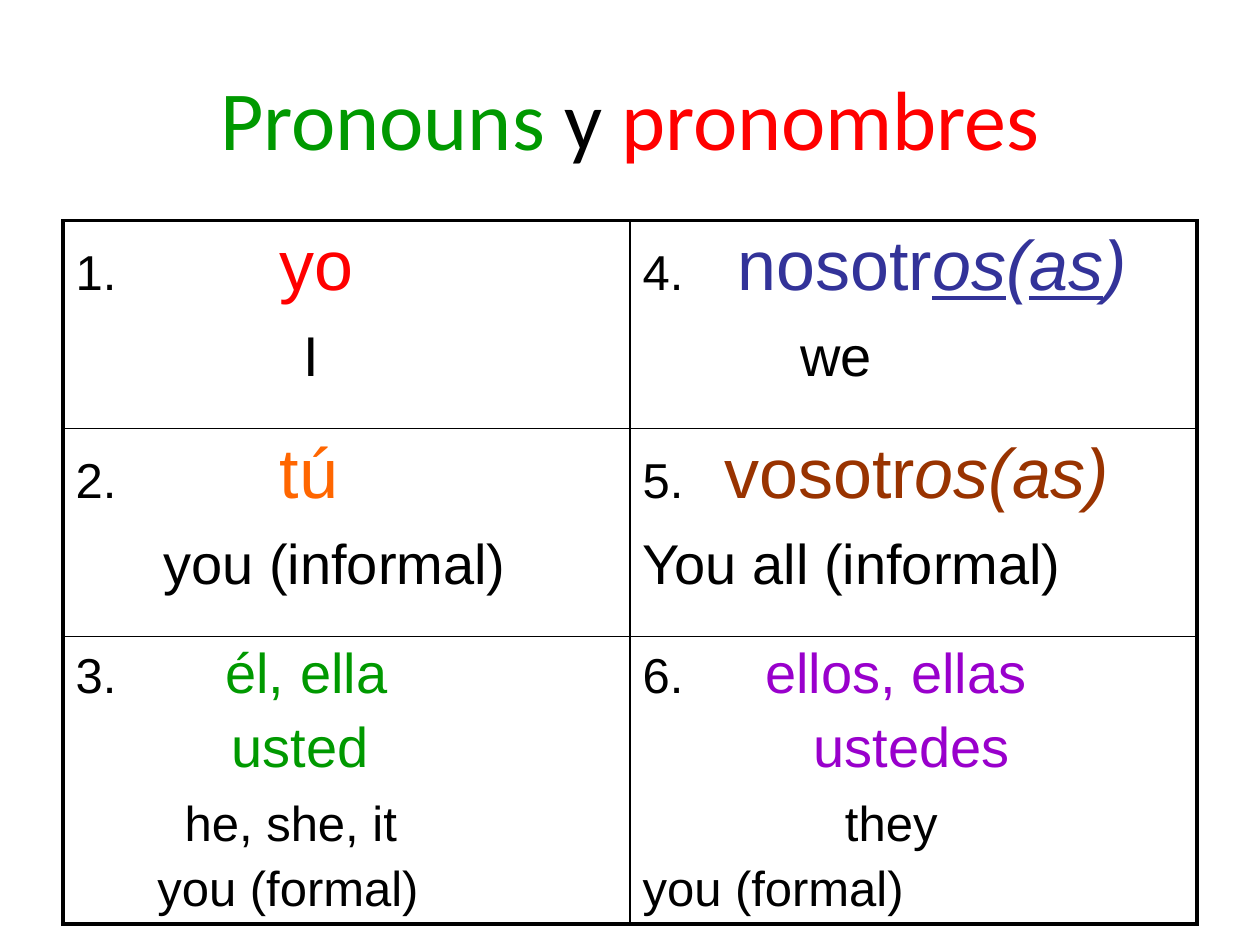
import pptx
import pptx.util
import pptx.dml.color
import pptx.enum.text
import lxml.etree
from pptx.oxml.ns import qn
from pptx.util import Cm, Pt

COLORS = {
    "black": "000000", "white": "FFFFFF", "green": "009900", "red": "FF0000",
    "blue": "333399", "orange": "FF6600", "brown": "993300", "purple": "9900CC",
}
THICK, THIN = Pt(2.25), Pt(1)


def add_run(p, text, size=28, color="black", font="Arial", italic=False, underline=False):
    r = p.add_run()
    r.text = text
    r.font.name = font
    r.font.size = Pt(size)
    r.font.italic = italic
    r.font.underline = underline
    r.font.color.rgb = pptx.dml.color.RGBColor.from_string(COLORS[color])


def add_heading(p, number, tab, parts, size, color):
    p.space_before = Pt(0)
    tabs = lxml.etree.SubElement(p._p.get_or_add_pPr(), qn("a:tabLst"))
    lxml.etree.SubElement(tabs, qn("a:tab"), pos=str(Cm(tab)), algn="l")
    add_run(p, f"{number}.\t")
    for text, style in parts:
        add_run(p, text, size=size, color=color, **style)


def add_line(tf, text, indent, before, size, color="black"):
    p = tf.add_paragraph()
    p.space_before = Pt(before)
    p._p.get_or_add_pPr().set("marL", str(Cm(indent)))
    add_run(p, text, size=size, color=color)


def set_borders(cell, **widths):
    tcPr = cell._tc.get_or_add_tcPr()
    for side in "LRTB":
        ln = lxml.etree.SubElement(tcPr, qn(f"a:ln{side}"), w=str(widths[side]))
        fill = lxml.etree.SubElement(ln, qn("a:solidFill"))
        lxml.etree.SubElement(fill, qn("a:srgbClr"), val=COLORS["black"])


def add_title(s):
    title = s.shapes.title
    title.left, title.top, title.width, title.height = Cm(1.27), Cm(0.76), Cm(22.86), Cm(3.18)
    tf = title.text_frame
    tf.vertical_anchor = pptx.enum.text.MSO_ANCHOR.MIDDLE
    p = tf.paragraphs[0]
    p.alignment = pptx.enum.text.PP_ALIGN.CENTER
    for text, color in (("Pronouns ", "green"), ("y", "black"), (" pronombres", "red")):
        add_run(p, text, size=48, color=color, font="Calibri")


def add_pronoun_table(s, cells):
    rows, cols = 3, 2
    table = s.shapes.add_table(rows, cols, Cm(1.27), Cm(4.45), Cm(22.86), Cm(14.18)).table
    table.first_row = table.horz_banding = False
    for row, height in zip(table.rows, (4.19, 4.19, 5.8)):
        row.height = Cm(height)
    for i, (tab, parts, size, color, lines) in enumerate(cells):
        col, row = divmod(i, rows)
        cell = table.cell(row, col)
        set_borders(
            cell,
            L=THICK if col == 0 else THIN,
            R=THICK if col == cols - 1 else THIN,
            T=THICK if row == 0 else THIN,
            B=THICK if row == rows - 1 else THIN,
        )
        cell.fill.solid()
        cell.fill.fore_color.rgb = pptx.dml.color.RGBColor.from_string(COLORS["white"])
        tf = cell.text_frame
        add_heading(tf.paragraphs[0], i + 1, tab, parts, size, color)
        for line in lines:
            add_line(tf, *line)


def main():
    prs = pptx.Presentation()
    prs.slide_width, prs.slide_height = Cm(25.4), Cm(19.05)
    s = prs.slides.add_slide(prs.slide_layouts[5])
    add_title(s)
    slanted = {"italic": True}
    ending = {"italic": True, "underline": True}
    add_pronoun_table(s, [
        (4.12, [("yo", {})], 40, "red", [("I", 4.59, 11.6, 32)]),
        (4.12, [("tú", {})], 40, "orange", [("you (informal)", 1.77, 11.6, 32)]),
        (3.02, [("él, ella", {})], 32, "green", [
            ("usted", 3.14, 6.4, 32, "green"),
            ("he, she, it", 2.2, 10, 28),
            ("you (formal)", 1.65, 6, 28),
        ]),
        (1.92, [("nosotr", {}), ("os", ending), ("(", slanted), ("as", ending), (")", slanted)],
         40, "blue", [("we", 3.18, 11.6, 32)]),
        (1.65, [("vosotr", {}), ("os(as)", slanted)], 40, "brown",
         [("You all (informal)", 0, 11.6, 32)]),
        (2.47, [("ellos, ellas", {})], 32, "purple", [
            ("ustedes", 3.45, 6.4, 32, "purple"),
            ("they", 4.08, 10, 28),
            ("you (formal)", 0, 6, 28),
        ]),
    ])
    prs.save("out.pptx")


if __name__ == "__main__":
    main()
